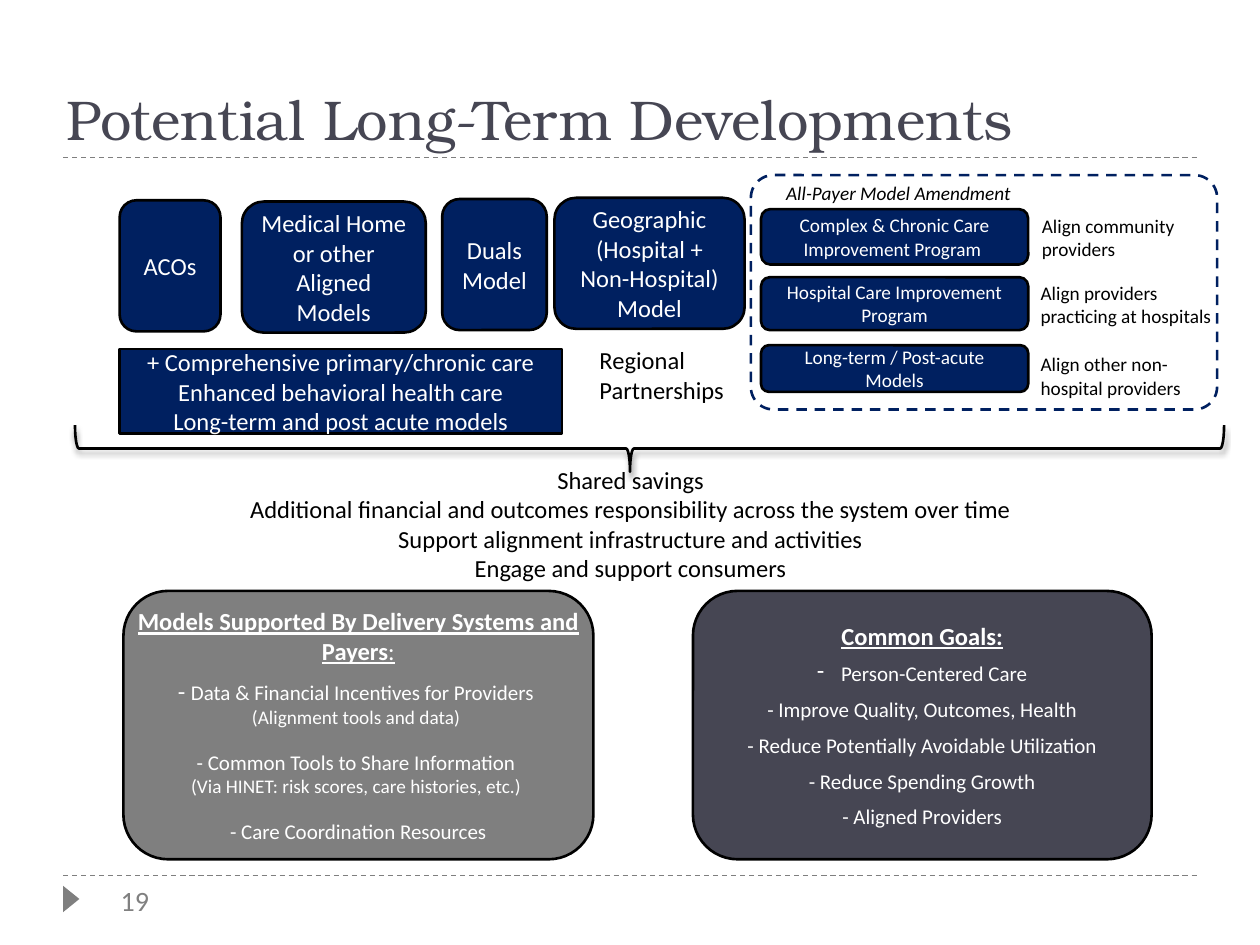
import pptx
import pptx.util
import pptx.dml.color
import pptx.enum.dml
import pptx.enum.shapes
import pptx.enum.text
import pptx.oxml
import pptx.oxml.ns
import lxml.etree

Inches = pptx.util.Inches
Pt = pptx.util.Pt
RGBColor = pptx.dml.color.RGBColor
Shape = pptx.enum.shapes.MSO_SHAPE
Align = pptx.enum.text.PP_ALIGN
Anchor = pptx.enum.text.MSO_ANCHOR
qn = pptx.oxml.ns.qn

NAVY = RGBColor(0x00, 0x20, 0x60)
SLATE = RGBColor(0x46, 0x46, 0x53)
GRAY = RGBColor(0x7F, 0x7F, 0x7F)
NUMBER_GRAY = RGBColor(0x80, 0x80, 0x80)
BLACK = RGBColor(0, 0, 0)
WHITE = RGBColor(255, 255, 255)


def write(paragraph, text, size=14, color=BLACK, font="Calibri",
          bold=False, italic=False, underline=False, align=None, after=0):
    run = paragraph.add_run()
    run.text = text
    run.font.name = font
    run.font.size = Pt(size)
    run.font.color.rgb = color
    run.font.bold = bold
    run.font.italic = italic
    run.font.underline = underline
    paragraph.alignment = align
    paragraph.space_after = Pt(after)


class SlideBuilder:
    def __init__(self, slide):
        self.slide = slide
        self.outline = Pt(1.5)
        self.rule_width = Pt(0.75)

    def place(self, at):
        return [Inches(length) for length in at]

    def rule(self, y):
        rule = self.slide.shapes.add_connector(
            pptx.enum.shapes.MSO_CONNECTOR.STRAIGHT, *self.place((0.5, y, 9.5, y)))
        rule.line.color.rgb = GRAY
        rule.line.width = self.rule_width
        rule.line.dash_style = pptx.enum.dml.MSO_LINE.DASH
        lxml.etree.SubElement(rule._element.spPr, qn("a:effectLst"))

    def shape(self, kind, at, fill=None, line=BLACK, dashed=False,
              rotation=0, adjustments=()):
        shape = self.slide.shapes.add_shape(kind, *self.place(at))
        shape.shadow.inherit = False
        shape.rotation = rotation
        for index, value in enumerate(adjustments):
            shape.adjustments[index] = value
        if fill is None:
            shape.fill.background()
        else:
            shape.fill.solid()
            shape.fill.fore_color.rgb = fill
        if line is None:
            shape.line.fill.background()
        else:
            shape.line.color.rgb = line
            shape.line.width = self.outline
        if dashed:
            shape.line.dash_style = pptx.enum.dml.MSO_LINE.DASH
        return shape

    def box(self, at, lines, size=14, kind=Shape.ROUNDED_RECTANGLE):
        frame = self.shape(kind, at, NAVY).text_frame
        self.fill_frame(frame, lines, Anchor.MIDDLE,
                        size=size, color=WHITE, align=Align.CENTER)

    def label(self, at, lines, anchor=Anchor.TOP, wrap=True, **style):
        frame = self.slide.shapes.add_textbox(*self.place(at)).text_frame
        self.fill_frame(frame, lines, anchor, wrap, **style)

    def fill_frame(self, frame, lines, anchor, wrap=True, **style):
        frame.word_wrap = wrap
        frame.vertical_anchor = anchor
        for index, text in enumerate(lines):
            paragraph = frame.add_paragraph() if index else frame.paragraphs[0]
            write(paragraph, text, **style)

    def panel(self, at, fill, paragraphs):
        frame = self.shape(Shape.ROUNDED_RECTANGLE, at, fill).text_frame
        frame.word_wrap = True
        frame.vertical_anchor = Anchor.MIDDLE
        frame.margin_left = frame.margin_right = 0
        frame.margin_top = frame.margin_bottom = 0
        for index, (after, runs) in enumerate(paragraphs):
            paragraph = frame.add_paragraph() if index else frame.paragraphs[0]
            for text, style in runs:
                write(paragraph, text, color=WHITE, align=Align.CENTER,
                      after=after, **style)
        return frame

    def brace(self, at):
        brace = self.shape(Shape.RIGHT_BRACE, at, rotation=90,
                           adjustments=(0.083, 0.517))
        effects = brace._element.spPr.find(qn("a:effectLst"))
        shadow = lxml.etree.SubElement(
            effects, qn("a:outerShdw"), blurRad=str(Pt(3)), dist=str(Pt(2)),
            dir="5400000", rotWithShape="0")
        color = lxml.etree.SubElement(shadow, qn("a:srgbClr"), val="000000")
        lxml.etree.SubElement(color, qn("a:alpha"), val="40000")


def dash_bullet(paragraph):
    properties = paragraph._p.get_or_add_pPr()
    properties.set("marL", str(Inches(0.19)))
    properties.set("indent", str(Inches(-0.19)))
    lxml.etree.SubElement(properties, qn("a:buChar"), char="-")


def main():
    deck = pptx.Presentation()
    deck.slide_width, deck.slide_height = Inches(10), Inches(7.5)
    page = SlideBuilder(deck.slides.add_slide(deck.slide_layouts[6]))

    for y in (6.95, 1.25):
        page.rule(y)
    page.shape(Shape.ISOSCELES_TRIANGLE, (0.46, 7.07, 0.21, 0.13), GRAY,
               line=None, rotation=90)
    page.label((0.86, 6.96, 0.47, 0.37), ["19"], wrap=False,
               size=16, color=NUMBER_GRAY)
    page.label((0.43, 0.17, 9, 1.08), ["Potential Long-Term Developments"],
               Anchor.BOTTOM, size=32, color=SLATE, font="TeX Gyre Bonum")

    for left, top, width, model in (
            (4.4, 1.57, 1.51, "Geographic (Hospital + Non-Hospital) Model"),
            (1.92, 1.6, 1.46, "Medical Home or other Aligned Models"),
            (0.95, 1.59, 0.8, "ACOs"),
            (3.51, 1.58, 0.83, "Duals Model")):
        page.box((left, top, width, 1.04), [model])

    page.brace((4.97, -1, 0.37, 9.12))

    for top, height, program, goal_left, goal_top, goal in (
            (1.66, 0.44, "Complex & Chronic Care Improvement Program ",
             8.17, 1.65, "Align community providers"),
            (2.2, 0.42, "Hospital Care Improvement Program",
             8.16, 2.18, "Align providers practicing at hospitals"),
            (2.74, 0.37, "Long-term / Post-acute Models",
             8.16, 2.75, "Align other non-hospital providers")):
        page.box((6.04, top, 2.12, height), [program], size=11)
        page.label((goal_left, goal_top, 1.61, 0.47), [goal], size=11)

    heading = dict(bold=True, underline=True)
    item, detail = dict(size=12), dict(size=11)
    page.panel((0.98, 4.69, 3.73, 2.13), GRAY, [
        (6, [("Models Supported By Delivery Systems and Payers", heading),
             (":", dict(underline=True))]),
        (0, [("- ", {}), ("Data & Financial Incentives for Providers ", item)]),
        (12, [("(Alignment tools and data) ", detail)]),
        (0, [("- Common Tools to Share Information ", item)]),
        (12, [("(Via HINET: risk scores, care histories, etc.) ", detail)]),
        (0, [("- Care Coordination Resources", item)])])

    goals = ("Person-Centered Care", "- Improve Quality, Outcomes, Health",
             "- Reduce Potentially Avoidable Utilization",
             "- Reduce Spending Growth", "- Aligned Providers")
    common_goals = page.panel(
        (5.5, 4.69, 3.64, 2.13), SLATE,
        [(6, [("Common Goals:", heading)])] + [(6, [(goal, item)]) for goal in goals])
    dash_bullet(common_goals.paragraphs[1])

    page.label((1.57, 3.64, 6.87, 1.04), [
        "Shared savings",
        "Additional financial and outcomes responsibility across the system over time",
        "Support alignment infrastructure and activities",
        "Engage and support consumers"], align=Align.CENTER)
    page.label((4.66, 2.69, 1.87, 0.57), ["Regional Partnerships"])
    page.label((6.14, 1.39, 2.45, 0.29), ["All-Payer Model Amendment"],
               size=11, italic=True)
    page.shape(Shape.ROUNDED_RECTANGLE, (5.96, 1.39, 3.7, 1.86), line=NAVY,
               dashed=True, adjustments=(0.096,))
    page.box((0.95, 2.77, 3.51, 0.67), [
        "+ Comprehensive primary/chronic care",
        "Enhanced behavioral health care",
        "Long-term and post acute models"], kind=Shape.RECTANGLE)

    deck.save("out.pptx")


if __name__ == "__main__":
    main()
